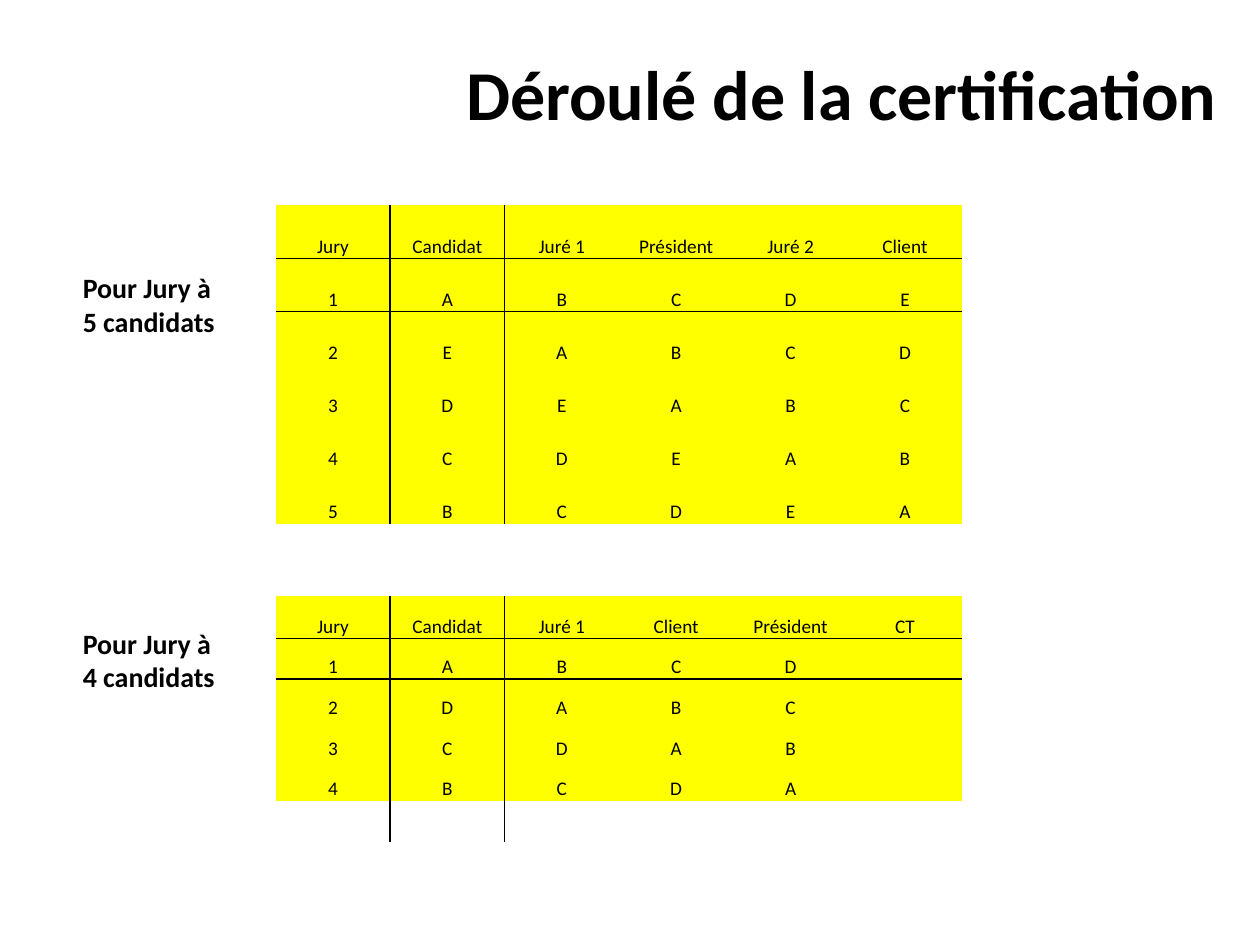
from dataclasses import dataclass

import lxml.etree
import pptx
import pptx.dml.color
import pptx.enum.text
import pptx.oxml.ns
import pptx.util

Cm = pptx.util.Cm
Pt = pptx.util.Pt
PP_ALIGN = pptx.enum.text.PP_ALIGN
MSO_ANCHOR = pptx.enum.text.MSO_ANCHOR
MSO_AUTO_SIZE = pptx.enum.text.MSO_AUTO_SIZE
qn = pptx.oxml.ns.qn

COLORS = {"text": "000000", "rule": "000000", "cell": "FFFF00"}
FONT = "Calibri"
PLAIN_STYLE = "{2D5ABB26-0587-4C30-8999-92F81FD0307C}"
COLUMNS = 6
CELL_SIZE = 11


@dataclass
class Rotation:
    first_row: int
    headers: list[str]
    candidates: str


@dataclass
class Label:
    text: str
    top: float


ROTATIONS = [
    Rotation(0, ["Jury", "Candidat", "Juré 1", "Président", "Juré 2", "Client"], "ABCDE"),
    Rotation(8, ["Jury", "Candidat", "Juré 1", "Client", "Président", "CT"], "ABCD"),
]
LABELS = [Label("Pour Jury à 5 candidats", 5.33), Label("Pour Jury à 4 candidats", 12.5)]
ROW_HEIGHTS = [1.07] * 6 + [0.64, 0.82, 0.85] + [0.82] * 5


def write(tf, text: str, *, size: float, bold: bool = False, align=PP_ALIGN.LEFT) -> None:
    p = tf.paragraphs[0]
    p.alignment = align
    r = p.add_run()
    r.text = text
    r.font.name = FONT
    r.font.size = Pt(size)
    r.font.bold = bold
    r.font.color.rgb = pptx.dml.color.RGBColor.from_string(COLORS["text"])


def place(sp, left: float, top: float, width: float, height: float) -> None:
    sp.left, sp.top, sp.width, sp.height = Cm(left), Cm(top), Cm(width), Cm(height)


def add_borders(cell, sides: str) -> None:
    tc_pr = cell._tc.get_or_add_tcPr()
    for side in "LRTB":
        if side in sides:
            ln = lxml.etree.SubElement(tc_pr, qn(f"a:ln{side}"), w=str(Pt(1)))
            fill = lxml.etree.SubElement(ln, qn("a:solidFill"))
            lxml.etree.SubElement(fill, qn("a:srgbClr"), val=COLORS["rule"])


def format_cell(cell, text: str, sides: str, filled: bool) -> None:
    cell.margin_left = cell.margin_right = cell.margin_top = Cm(0.02)
    cell.margin_bottom = 0
    cell.vertical_anchor = MSO_ANCHOR.BOTTOM
    add_borders(cell, sides)
    if filled:
        cell.fill.solid()
        cell.fill.fore_color.rgb = pptx.dml.color.RGBColor.from_string(COLORS["cell"])
    if text:
        write(cell.text_frame, text, size=CELL_SIZE, align=PP_ALIGN.CENTER)
    else:
        p = cell.text_frame.paragraphs[0]
        lxml.etree.SubElement(p._p, qn("a:endParaRPr"), sz=str(CELL_SIZE * 100))


def rotation_rows(rotation: Rotation) -> list[list[str]]:
    names = rotation.candidates
    n = len(names)
    rows = [rotation.headers]
    for turn in range(n):
        seats = [names[(seat - turn) % n] for seat in range(n)]
        rows.append([str(turn + 1)] + seats + [""] * (COLUMNS - 1 - n))
    return rows


def add_rotations(s) -> None:
    frame = s.shapes.add_table(
        len(ROW_HEIGHTS), COLUMNS, Cm(5.56), Cm(4.14), Cm(13.84), Cm(sum(ROW_HEIGHTS))
    )
    table = frame.table
    table.first_row = table.horz_banding = False
    table._tbl.tblPr.find(qn("a:tableStyleId")).text = PLAIN_STYLE
    for row, height in zip(table.rows, ROW_HEIGHTS):
        row.height = Cm(height)

    contents = {}
    header_rows = [rotation.first_row for rotation in ROTATIONS]
    for rotation in ROTATIONS:
        contents.update(enumerate(rotation_rows(rotation), rotation.first_row))

    last_row = len(ROW_HEIGHTS) - 1
    for i in range(len(ROW_HEIGHTS)):
        filled = i in contents
        ruled = filled or i == last_row
        for j, text in enumerate(contents.get(i, [""] * COLUMNS)):
            sides = {0: "R", 1: "L"}.get(j, "") if ruled else ""
            if i in header_rows:
                sides += "B"
            elif i - 1 in header_rows:
                sides += "T"
            format_cell(table.cell(i, j), text, sides, filled)


def add_label(s, label: Label) -> None:
    sp = s.shapes.add_textbox(Cm(1.42), Cm(label.top), Cm(3.18), Cm(1.63))
    sp.text_frame.word_wrap = True
    sp.text_frame.auto_size = MSO_AUTO_SIZE.SHAPE_TO_FIT_TEXT
    write(sp.text_frame, label.text, size=16, bold=True)


def main() -> None:
    prs = pptx.Presentation()
    prs.slide_width, prs.slide_height = Cm(25.4), Cm(19.05)
    s = prs.slides.add_slide(prs.slide_layouts[5])

    title = s.shapes.title
    place(title, 9.14, 0.89, 17.15, 1.96)
    title.text_frame.word_wrap = True
    title.text_frame.vertical_anchor = MSO_ANCHOR.TOP
    title.text_frame.auto_size = MSO_AUTO_SIZE.SHAPE_TO_FIT_TEXT
    write(title.text_frame, "Déroulé de la certification", size=40, bold=True)

    add_rotations(s)
    for label in LABELS:
        add_label(s, label)
    prs.save("out.pptx")


if __name__ == "__main__":
    main()
